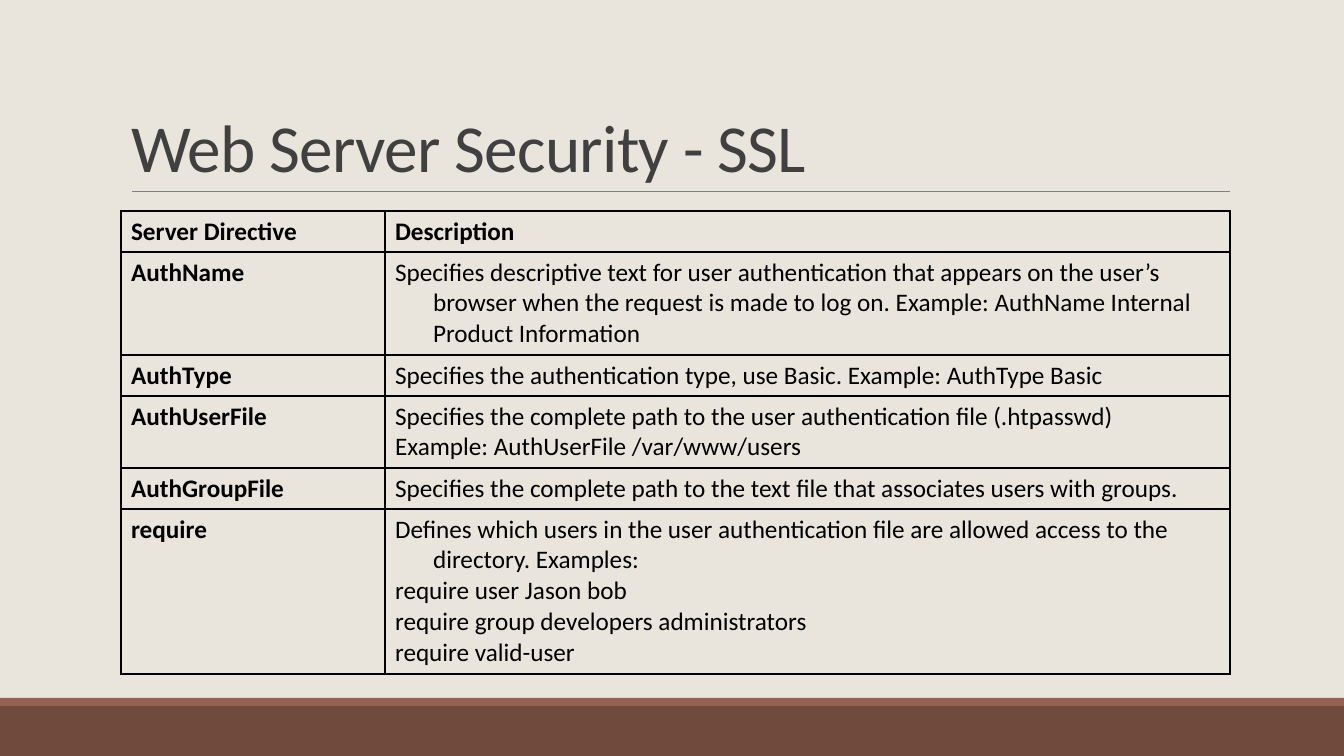
from dataclasses import dataclass

from lxml.etree import SubElement
from pptx import Presentation
from pptx.dml.color import RGBColor
from pptx.enum.shapes import MSO_CONNECTOR as Connector, MSO_SHAPE as Shape
from pptx.enum.text import MSO_ANCHOR as Anchor, MSO_AUTO_SIZE as AutoSize, PP_ALIGN as Align
from pptx.oxml.ns import qn
from pptx.util import Emu, Pt

EMU_PER_PX = 914400 / 100.8


@dataclass(frozen=True)
class Theme:
    """Hold the colours, font and type sizes of the slide."""
    font: str = "Calibri"
    paper: str = "E9E5DC"
    heading: str = "404040"
    ink: str = "000000"
    rule: str = "808080"
    band: str = "704A3D"
    stripe: str = "956251"
    title_size: int = 48
    table_size: int = 18


THEME = Theme()
COLUMNS = (264, 845)
LINE_HEIGHT = 31
CELL_PADDING = 10
ROWS = (
    ("Server Directive", ["Description"], 1),
    ("AuthName", ["Specifies descriptive text for user authentication that appears on the user’s "
                  "browser when the request is made to log on. Example: AuthName Internal "
                  "Product Information"], 3),
    ("AuthType", ["Specifies the authentication type, use Basic. Example: AuthType Basic"], 1),
    ("AuthUserFile", ["Specifies the complete path to the user authentication file (.htpasswd)",
                      "Example: AuthUserFile /var/www/users"], 2),
    ("AuthGroupFile", ["Specifies the complete path to the text file that associates users "
                       "with groups."], 1),
    ("require", ["Defines which users in the user authentication file are allowed access to the "
                 "directory. Examples:",
                 "require user Jason bob",
                 "require group developers administrators",
                 "require valid-user"], 5),
)


def px(length):
    """Turn a length in px into EMU."""
    return Emu(round(length * EMU_PER_PX))


def colour(code):
    """Turn a hex code into a colour."""
    return RGBColor.from_string(code)


def add_span(para, text, size, code, bold=False):
    """Add one formatted run to a paragraph."""
    span = para.add_run()
    span.text = text
    span.font.name = THEME.font
    span.font.size = Pt(size)
    span.font.bold = bold
    span.font.color.rgb = colour(code)
    return span


def add_band(page, top, height, code):
    """Add a plain band across the whole page."""
    band = page.shapes.add_shape(Shape.RECTANGLE, 0, px(top), px(1344), px(height))
    band.shadow.inherit = False
    band.fill.solid()
    band.fill.fore_color.rgb = colour(code)
    band.line.fill.background()


def add_rule(page, left, right, top):
    """Add a thin horizontal rule."""
    rule = page.shapes.add_connector(Connector.STRAIGHT, px(left), px(top), px(right), px(top))
    rule.line.color.rgb = colour(THEME.rule)
    rule.line.width = Pt(0.5)
    SubElement(rule._element.spPr, qn("a:effectLst"))


def set_title(page, text):
    """Place and format the title placeholder."""
    box = page.shapes.title
    box.left, box.top, box.width, box.height = px(121), px(31), px(1109), px(160)
    frame = box.text_frame
    frame.word_wrap = True
    frame.auto_size = AutoSize.NONE
    frame.vertical_anchor = Anchor.BOTTOM
    para = frame.paragraphs[0]
    para.alignment = Align.LEFT
    para.line_spacing = 0.85
    span = add_span(para, text, THEME.title_size, THEME.heading)
    span.font._element.set("spc", "-50")


def set_borders(cell):
    """Draw a one-point border on every side of a cell."""
    properties = cell._tc.get_or_add_tcPr()
    for side in ("lnL", "lnR", "lnT", "lnB"):
        line = SubElement(properties, qn(f"a:{side}"), w=str(Pt(1)))
        fill = SubElement(line, qn("a:solidFill"))
        SubElement(fill, qn("a:srgbClr"), val=THEME.ink)


def fill_cell(cell, texts, bold):
    """Write hanging paragraphs into an unfilled, bordered cell."""
    set_borders(cell)
    cell.fill.background()
    frame = cell.text_frame
    for index, text in enumerate(texts):
        para = frame.add_paragraph() if index else frame.paragraphs[0]
        properties = para._p.get_or_add_pPr()
        properties.set("marL", str(px(38)))
        properties.set("indent", str(-px(38)))
        add_span(para, text, THEME.table_size, THEME.ink, bold)


def add_directives(page, left, top):
    """Add the table of directives."""
    heights = [lines * LINE_HEIGHT + CELL_PADDING for _, _, lines in ROWS]
    table = page.shapes.add_table(len(ROWS), len(COLUMNS), px(left), px(top),
                                  px(sum(COLUMNS)), px(sum(heights))).table
    table.first_row = True
    table.horz_banding = False
    for column, width in zip(table.columns, COLUMNS):
        column.width = px(width)
    for index, (name, description, _) in enumerate(ROWS):
        table.rows[index].height = px(heights[index])
        fill_cell(table.cell(index, 0), [name], True)
        fill_cell(table.cell(index, 1), description, index == 0)


def main():
    """Build and save the slide."""
    deck = Presentation()
    deck.slide_width, deck.slide_height = px(1344), px(756)
    page = deck.slides.add_slide(deck.slide_layouts[5])
    page.background.fill.solid()
    page.background.fill.fore_color.rgb = colour(THEME.paper)
    add_band(page, 706, 50, THEME.band)
    add_band(page, 698, 8, THEME.stripe)
    add_rule(page, 132, 1230, 191)
    set_title(page, "Web Server Security - SSL")
    add_directives(page, 121, 211)
    deck.save("out.pptx")


if __name__ == "__main__":
    main()
